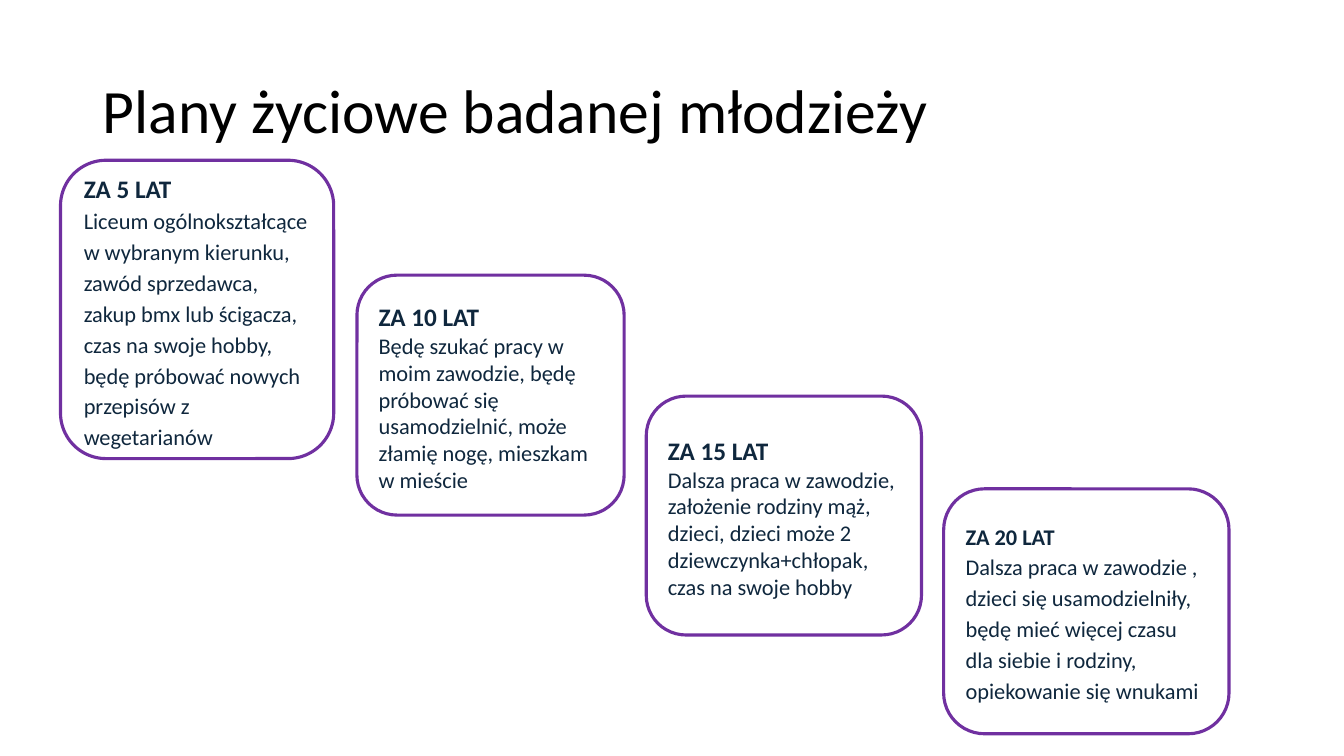
import pptx
import pptx.util
import pptx.dml.color
import pptx.enum.shapes
import pptx.enum.text

Inches = pptx.util.Inches
Pt = pptx.util.Pt

COLORS = {"background": "FFFFFF", "title": "000000", "text": "0F273D", "border": "7030A0"}

# Each stage: place, heading, heading size, body line spacing, body paragraphs
STAGES = [
    ((0.6, 1.59, 2.71, 2.96), "ZA 5 LAT", 18, 1.15,
     ["Liceum ogólnokształcące w wybranym kierunku, zawód sprzedawca, "
      "zakup bmx lub ścigacza, czas na swoje hobby, będę próbować nowych "
      "przepisów z wegetarianów"]),
    ((3.54, 2.73, 2.65, 2.38), "ZA 10 LAT", 18, 1.0,
     ["Będę szukać pracy w moim zawodzie, będę próbować się usamodzielnić, "
      "może złamię nogę, mieszkam w mieście"]),
    ((6.41, 3.93, 2.73, 2.37), "ZA 15 LAT", 18, 1.0,
     ["Dalsza praca w zawodzie,",
      "założenie rodziny mąż, dzieci, dzieci może 2 dziewczynka+chłopak, "
      "czas na swoje hobby"]),
    ((9.36, 4.85, 2.83, 2.43), "ZA 20 LAT", 16, 1.15,
     ["Dalsza praca w zawodzie , dzieci się usamodzielniły, będę mieć więcej "
      "czasu dla siebie i rodziny, opiekowanie się wnukami"]),
]


class SlideBuilder:
    """Holds the style and the current slide."""

    font_name = "Calibri"
    body_size = 16

    def __init__(self, deck):
        self.slide = deck.slides.add_slide(deck.slide_layouts[5])
        self.fill(self.slide.background.fill, "background")

    def color(self, name):
        return pptx.dml.color.RGBColor.from_string(COLORS[name])

    def fill(self, fill, name):
        fill.solid()
        fill.fore_color.rgb = self.color(name)

    def format(self, para, size, color, spacing, bold=False):
        para.alignment = pptx.enum.text.PP_ALIGN.LEFT
        para.line_spacing = spacing
        para.font.name = self.font_name
        para.font.size = Pt(size)
        para.font.bold = bold
        para.font.color.rgb = self.color(color)

    def title(self, text, place):
        title = self.slide.shapes.title
        title.left, title.top, title.width, title.height = map(Inches, place)
        frame = title.text_frame
        frame.text = text
        frame.vertical_anchor = pptx.enum.text.MSO_ANCHOR.MIDDLE
        self.format(frame.paragraphs[0], 44, "title", 0.9)

    def stage(self, place, heading, heading_size, spacing, body):
        box = self.slide.shapes.add_shape(
            pptx.enum.shapes.MSO_SHAPE.ROUNDED_RECTANGLE, *map(Inches, place))
        box.shadow.inherit = False
        self.fill(box.fill, "background")
        box.line.color.rgb = self.color("border")
        box.line.width = Pt(2.25)

        frame = box.text_frame
        frame.word_wrap = True
        frame.vertical_anchor = pptx.enum.text.MSO_ANCHOR.MIDDLE
        frame.text = "\n".join([heading] + body)
        self.format(frame.paragraphs[0], heading_size, "text", 1.15, bold=True)
        for para in frame.paragraphs[1:]:
            self.format(para, self.body_size, "text", spacing)


def main():
    deck = pptx.Presentation()
    deck.slide_width = Inches(13.33)
    deck.slide_height = Inches(7.5)
    page = SlideBuilder(deck)

    # Title
    page.title("Plany życiowe badanej młodzieży", (0.92, 0.4, 11.5, 1.45))

    # Descending steps of life plans
    for stage in STAGES:
        page.stage(*stage)

    deck.save("out.pptx")


if __name__ == "__main__":
    main()
